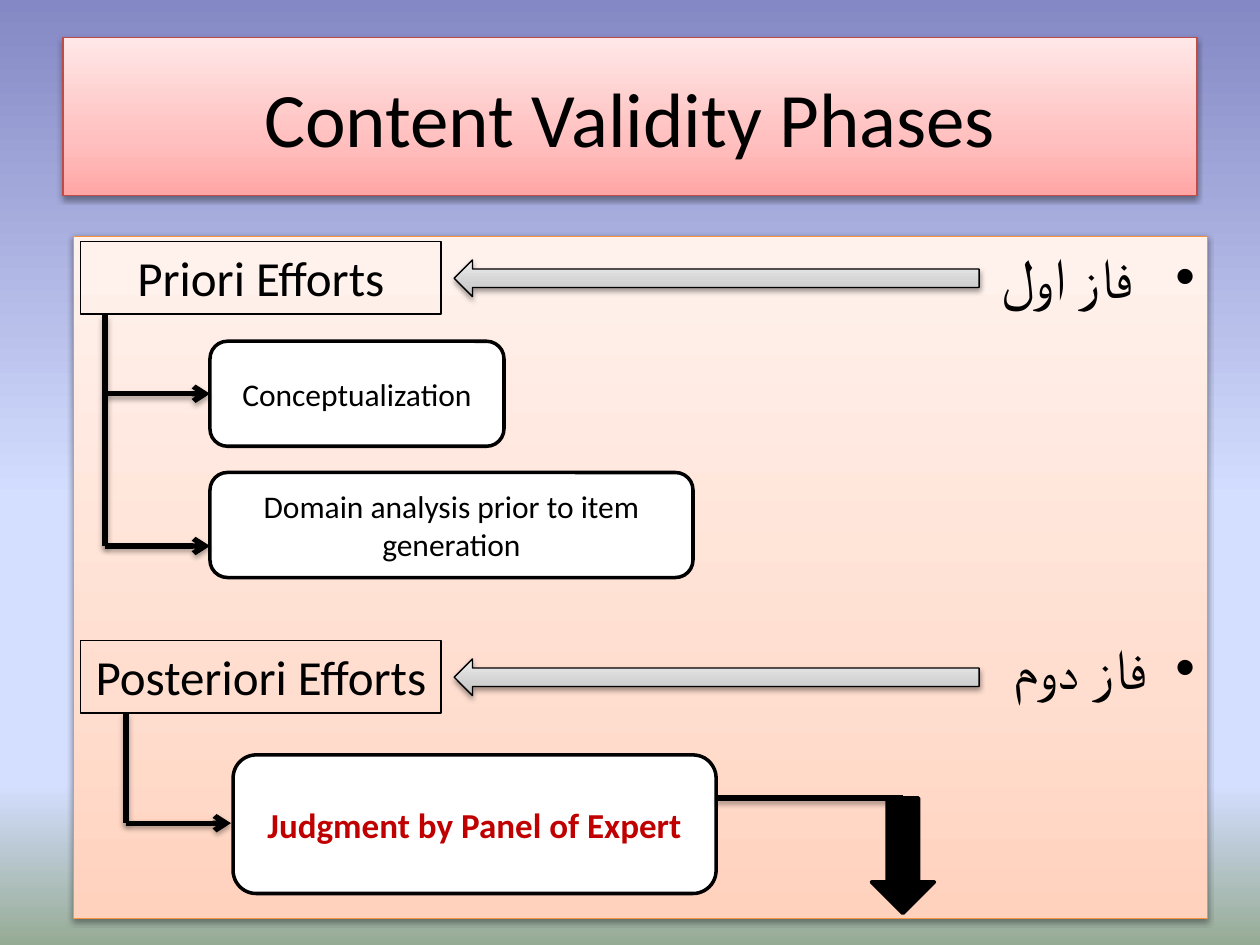
"""Build the slide on the two phases of content validity."""
from dataclasses import dataclass

from lxml.etree import SubElement
from pptx import Presentation
from pptx.dml.color import RGBColor as Rgb
from pptx.enum.shapes import MSO_CONNECTOR as Link, MSO_SHAPE as Kind
from pptx.enum.text import MSO_ANCHOR as Anchor, PP_ALIGN as Align
from pptx.oxml.ns import qn
from pptx.util import Inches, Pt


@dataclass(frozen=True)
class Theme:
    font: str = "Calibri"
    ink: str = "000000"
    paper: str = "FFFFFF"
    accent: str = "C00000"
    title_edge: str = "BF4C48"
    panel_edge: str = "F69240"
    sky: tuple = ((0, "8488C4"), (53, "D4DEFF"), (83, "D4DEFF"), (100, "96AB94"))
    rose: tuple = ((0, "FFA6A5"), (35, "FFC0BF"), (100, "FFE7E7"))
    peach: tuple = ((0, "FFD2BD"), (35, "FFDED0"), (100, "FFF2ED"))
    silver: tuple = ((0, "BDBDBD"), (35, "D1D1D1"), (100, "EEEEEE"))
    title: int = 44
    phase: int = 32
    effort: int = 28
    judgment: int = 20
    step: int = 18
    hairline: float = 0.75
    outline: float = 2
    rule: float = 3


THEME = Theme()
COLUMNS, ROWS = 120, 90
WIDTH, HEIGHT = Inches(10), Inches(7.5)


def across(columns):
    return round(WIDTH * columns / COLUMNS)


def down(rows):
    return round(HEIGHT * rows / ROWS)


def paint_gradient(fill, stops, angle):
    fill.gradient()
    fill.gradient_angle = angle
    stop_list = fill._fill._gradFill.find(qn("a:gsLst"))
    for stop in list(stop_list):
        stop_list.remove(stop)
    for position, color in stops:
        stop = SubElement(stop_list, qn("a:gs"), pos=str(position * 1000))
        SubElement(stop, qn("a:srgbClr"), val=color)


def cast_shadow(item, opacity, distance):
    properties = item._element.spPr
    for effects in properties.findall(qn("a:effectLst")):
        properties.remove(effects)
    effects = SubElement(properties, qn("a:effectLst"))
    shadow = SubElement(effects, qn("a:outerShdw"), blurRad=str(Pt(3.1)),
                        dist=str(Pt(distance)), dir="5400000", rotWithShape="0")
    color = SubElement(shadow, qn("a:srgbClr"), val=THEME.ink)
    SubElement(color, qn("a:alpha"), val=str(opacity * 1000))


def add_block(slide, kind, left, top, width, height, fill=None,
              edge=THEME.ink, weight=THEME.hairline):
    block = slide.shapes.add_shape(kind, across(left), down(top),
                                   across(width), down(height))
    block.shadow.inherit = False
    block.line.color.rgb = Rgb.from_string(edge)
    block.line.width = Pt(weight)
    if fill is None:
        block.fill.background()
    elif isinstance(fill, str):
        block.fill.solid()
        block.fill.fore_color.rgb = Rgb.from_string(fill)
    else:
        paint_gradient(block.fill, fill, 90)
        cast_shadow(block, 38, 1.6)
    return block


def write(block, *lines, size, color=THEME.ink, bold=False, align=Align.CENTER,
          anchor=Anchor.MIDDLE, before=(0,), bulleted_rtl=False):
    frame = block.text_frame
    frame.word_wrap = True
    frame.vertical_anchor = anchor
    for index, (line, space) in enumerate(zip(lines, before)):
        paragraph = frame.add_paragraph() if index else frame.paragraphs[0]
        paragraph.alignment = align
        paragraph.space_before = Pt(space)
        run = paragraph.add_run()
        run.text = line
        run.font.name = THEME.font
        run.font.size = Pt(size)
        run.font.bold = bold
        run.font.color.rgb = Rgb.from_string(color)
        if bulleted_rtl:
            layout = paragraph._p.get_or_add_pPr()
            indent = Inches(0.38)
            layout.set("marL", str(indent))
            layout.set("indent", str(-indent))
            layout.set("rtl", "1")
            SubElement(layout, qn("a:buFont"), typeface="Arial")
            SubElement(layout, qn("a:buChar"), char="•")


def add_rule(slide, start, end, arrow=False):
    rule = slide.shapes.add_connector(Link.STRAIGHT, across(start[0]), down(start[1]),
                                      across(end[0]), down(end[1]))
    rule.line.color.rgb = Rgb.from_string(THEME.ink)
    rule.line.width = Pt(THEME.rule)
    if arrow:
        SubElement(rule.line._get_or_add_ln(), qn("a:tailEnd"), type="arrow")
    cast_shadow(rule, 35, 1.8)


def add_effort(slide, name, top):
    add_block(slide, Kind.LEFT_ARROW, 43.25, top + 1.75, 50, 3.5, THEME.silver)
    effort = add_block(slide, Kind.RECTANGLE, 7.7, top, 34.3, 6.9)
    write(effort, name, size=THEME.effort, anchor=Anchor.TOP)


def add_step(slide, name, left, top, width, height, **style):
    step = add_block(slide, Kind.ROUNDED_RECTANGLE, left, top, width, height,
                     THEME.paper, weight=THEME.outline)
    write(step, name, **style)


def add_branches(slide, trunk, top, tip, *rows):
    add_rule(slide, (trunk, top), (trunk, rows[-1]))
    for row in rows:
        add_rule(slide, (trunk, row), (tip, row), arrow=True)


def main():
    deck = Presentation()
    deck.slide_width, deck.slide_height = WIDTH, HEIGHT
    slide = deck.slides.add_slide(deck.slide_layouts[6])
    paint_gradient(slide.background.fill, THEME.sky, 270)

    heading = add_block(slide, Kind.RECTANGLE, 6, 3.6, 108, 15, THEME.rose, THEME.title_edge)
    write(heading, "Content Validity Phases", size=THEME.title)
    panel = add_block(slide, Kind.RECTANGLE, 7, 22.5, 108, 65, THEME.peach, THEME.panel_edge)
    write(panel, " فاز اول", "فاز دوم", size=THEME.phase, align=Align.RIGHT,
          anchor=Anchor.TOP, before=(6.4, 185), bulleted_rtl=True)

    add_effort(slide, "Priori Efforts", 23)
    add_step(slide, "Conceptualization", 20, 32.5, 28, 10, size=THEME.step)
    add_step(slide, "Domain analysis prior to item generation", 20, 45, 46, 10,
             size=THEME.step)
    add_branches(slide, 10, 30, 20, 37.5, 52)

    add_effort(slide, "Posteriori Efforts", 61)
    add_step(slide, "Judgment by Panel of Expert", 22.2, 71.9, 46, 13.2,
             size=THEME.judgment, color=THEME.accent, bold=True)
    add_branches(slide, 12, 67.9, 22, 78.4)
    add_block(slide, Kind.DOWN_ARROW, 83, 76, 6, 11, THEME.ink, weight=THEME.outline)
    add_rule(slide, (68.2, 76), (86, 76))
    deck.save("out.pptx")


if __name__ == "__main__":
    main()
